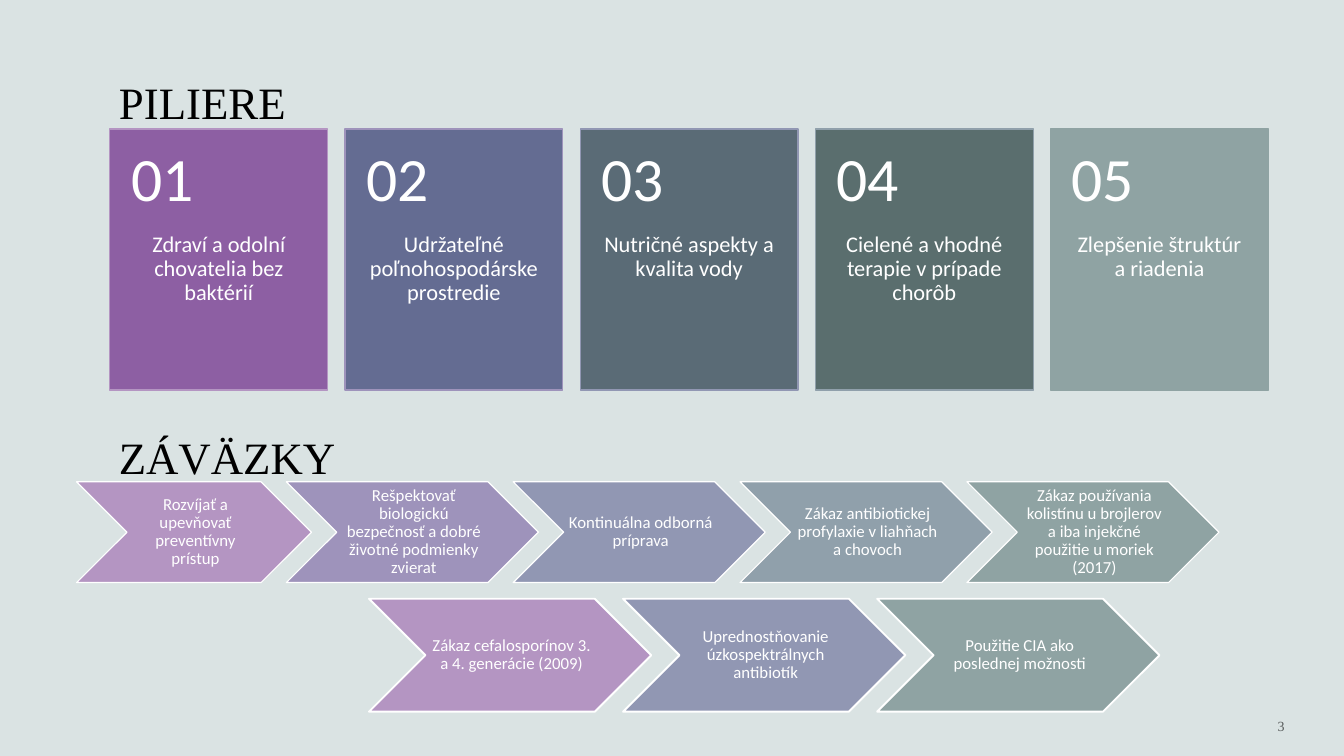
"""Build the slide with five pillars and two rows of commitments."""
from pptx import Presentation
from pptx.dml.color import RGBColor
from pptx.enum.shapes import MSO_SHAPE
from pptx.enum.text import MSO_ANCHOR, MSO_AUTO_SIZE, PP_ALIGN
from pptx.util import Inches, Pt

COLORS = {
    "background": "DAE3E3", "white": "FFFFFF", "black": "000000", "number": "575B5B",
    "purple": "8D5FA3", "indigo": "646C92", "slate": "5A6B76", "pine": "5A6E6E",
    "mauve": "B495C2", "lilac": "9E93BB", "periwinkle": "9197B3",
    "steel": "90A0AB", "sage": "8FA3A3",
}
PILLARS = [
    ("Zdraví a odolní chovatelia bez baktérií", "purple", "mauve"),
    ("Udržateľné poľnohospodárske prostredie", "indigo", "lilac"),
    ("Nutričné aspekty a kvalita vody", "slate", "periwinkle"),
    ("Cielené a vhodné terapie v prípade chorôb", "pine", "steel"),
    ("Zlepšenie štruktúr a riadenia", "sage", "sage"),
]
UPPER_COMMITMENTS = [
    ("Rozvíjať a upevňovať preventívny prístup", "mauve", 0.76, 2.33),
    ("Rešpektovať biologickú bezpečnosť a dobré životné podmienky zvierat", "lilac", 2.84, 2.5),
    ("Kontinuálna odborná príprava", "periwinkle", 5.09, 2.5),
    ("Zákaz antibiotickej profylaxie v liahňach a chovoch", "steel", 7.34, 2.5),
    ("Zákaz používania kolistínu u brojlerov a iba injekčné použitie u moriek (2017)",
     "sage", 9.59, 2.5),
]
LOWER_COMMITMENTS = [
    ("Zákaz cefalosporínov 3. a 4. generácie (2009)", "mauve", 3.66, 2.8),
    ("Uprednostňovanie úzkospektrálnych antibiotík", "periwinkle", 6.18, 2.8),
    ("Použitie CIA ako poslednej možnosti", "sage", 8.7, 2.8),
]


def write(sp, text, size, color="white", font="Calibri", align=PP_ALIGN.LEFT,
          anchor=MSO_ANCHOR.MIDDLE, insets=(0.1, 0.05, 0.1, 0.05), spacing=0.9):
    tf = sp.text_frame
    tf.text = text
    tf.word_wrap = True
    tf.auto_size = MSO_AUTO_SIZE.NONE
    tf.vertical_anchor = anchor
    tf.margin_left, tf.margin_top, tf.margin_right, tf.margin_bottom = map(Inches, insets)
    p = tf.paragraphs[0]
    p.alignment = align
    p.line_spacing = spacing
    r = p.runs[0]
    r.font.size = Pt(size)
    r.font.name = font
    r.font.color.rgb = RGBColor.from_string(COLORS[color])


def add_block(kind, left, top, width, height, fill, line, line_width):
    sp = slide.shapes.add_shape(kind, Inches(left), Inches(top), Inches(width), Inches(height))
    sp.shadow.inherit = False
    sp.fill.solid()
    sp.fill.fore_color.rgb = RGBColor.from_string(COLORS[fill])
    sp.line.color.rgb = RGBColor.from_string(COLORS[line])
    sp.line.width = Pt(line_width)
    return sp


prs = Presentation()
prs.slide_width = Inches(13.33)
prs.slide_height = Inches(7.5)
slide = prs.slides.add_slide(prs.slide_layouts[5])
slide.background.fill.solid()
slide.background.fill.fore_color.rgb = RGBColor.from_string(COLORS["background"])

for top, height, line_width, commitments in [
    (4.78, 1, 0.85, UPPER_COMMITMENTS),
    (5.94, 1.12, 1.35, LOWER_COMMITMENTS),
]:
    for text, fill, left, width in commitments:
        sp = add_block(MSO_SHAPE.CHEVRON, left, top, width, height, fill, "white", line_width)
        write(sp, text, 12, align=PP_ALIGN.CENTER, insets=(0.05, 0.02, 0.02, 0.02))

for i, (text, fill, line) in enumerate(PILLARS):
    left = 1.09 + i * 2.3325
    sp = add_block(MSO_SHAPE.RECTANGLE, left, 1.28, 2.16, 2.59, fill, line, 0.85)
    write(sp, text, 16, align=PP_ALIGN.CENTER, anchor=MSO_ANCHOR.TOP,
          insets=(0.21, 1.03, 0.21, 0.36))
    number = slide.shapes.add_textbox(Inches(left), Inches(1.28), Inches(2.16), Inches(1.04))
    write(number, f"{i + 1:02}", 44, insets=(0.21, 0.18, 0.21, 0.18))

title = slide.shapes.title
title.left, title.top, title.width, title.height = map(Inches, (1.08, 0.1, 11.17, 1.22))
subtitle = slide.shapes.add_textbox(Inches(1.08), Inches(3.63), Inches(11.17), Inches(1.22))
for sp, text in [(title, "PILIERE"), (subtitle, "ZÁVÄZKY")]:
    write(sp, text, 32, "black", "Times New Roman", anchor=MSO_ANCHOR.BOTTOM, spacing=1.0)

page = slide.shapes.add_textbox(Inches(10.92), Inches(6.95), Inches(1.92), Inches(0.5))
write(page, "3", 10, "number", "Times New Roman", PP_ALIGN.RIGHT, spacing=1.0)

prs.save("out.pptx")
